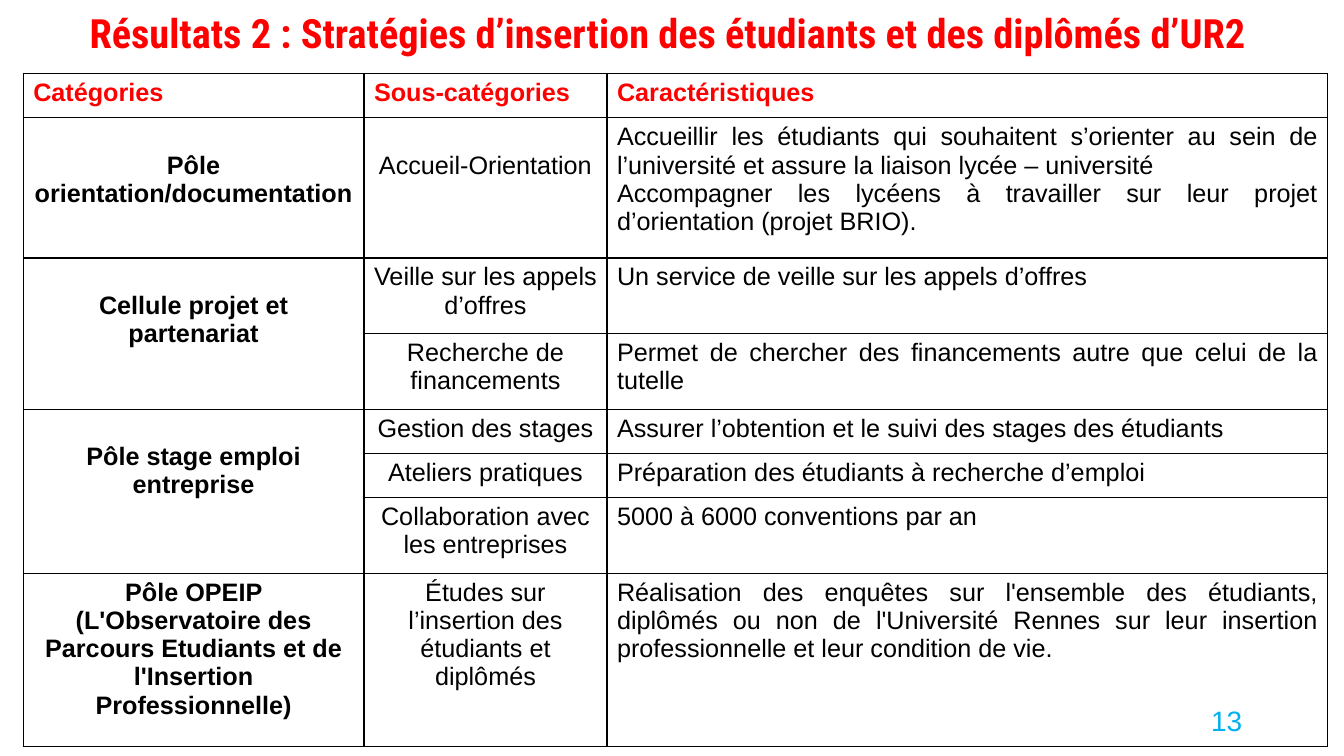
from lxml.etree import SubElement
from pptx import Presentation
from pptx.dml.color import RGBColor
from pptx.enum.text import MSO_ANCHOR, MSO_AUTO_SIZE, PP_ALIGN
from pptx.oxml.ns import qn
from pptx.util import Inches, Pt

RED = RGBColor(0xFF, 0x00, 0x00)
BLACK = RGBColor(0x00, 0x00, 0x00)
CYAN = RGBColor(0x00, 0xB0, 0xF0)

TITLE = "Résultats 2 : Stratégies d’insertion des étudiants et des diplômés d’UR2"
HEADERS = ["Catégories", "Sous-catégories", "Caractéristiques"]
GROUPS = [
    ("Pôle orientation/documentation", [
        ("Accueil-Orientation", [
            "Accueillir les étudiants qui souhaitent s’orienter au sein de "
            "l’université\u00a0et assure la liaison lycée – université",
            "Accompagner les lycéens à travailler sur leur projet "
            "d’orientation (projet BRIO)."]),
    ]),
    ("Cellule projet et partenariat", [
        ("Veille sur les appels d’offres",
         ["Un service de veille sur les appels d’offres"]),
        ("Recherche de financements",
         ["Permet de chercher des financements autre que celui de la tutelle"]),
    ]),
    ("Pôle stage emploi entreprise", [
        ("Gestion des stages",
         ["Assurer l’obtention et le suivi des stages des étudiants"]),
        ("Ateliers pratiques",
         ["Préparation des étudiants à recherche d’emploi"]),
        ("Collaboration avec les entreprises",
         ["5000 à 6000 conventions par an"]),
    ]),
    ("Pôle OPEIP (L'Observatoire des Parcours Etudiants et de l'Insertion "
     "Professionnelle)", [
        ("Études sur l’insertion des étudiants et diplômés", [
            "Réalisation des enquêtes sur l'ensemble des étudiants, diplômés "
            "ou non de l'Université Rennes sur leur insertion professionnelle "
            "et leur condition de vie."]),
    ]),
]
COL_WIDTHS = [3.38, 2.41, 7.15]
ROW_HEIGHTS = [0.44, 1.39, 0.75, 0.75, 0.44, 0.44, 0.75, 1.72]
LOWERED = {"Pôle orientation/documentation", "Accueil-Orientation",
           "Cellule projet et partenariat", "Pôle stage emploi entreprise"}
TOP_MARGIN, LOWERED_MARGIN = 0.05, 0.33


def write(tf, *lines, size=18, font="Arial", color=BLACK, bold=False,
          align=PP_ALIGN.CENTER, spacing=1.0):
    for i, line in enumerate(lines):
        p = tf.add_paragraph() if i else tf.paragraphs[0]
        p.alignment = align
        p.line_spacing = spacing
        r = p.add_run()
        r.text = line
        r.font.size = Pt(size)
        r.font.name = font
        r.font.bold = bold
        r.font.color.rgb = color


def add_borders(cell):
    tcPr = cell._tc.get_or_add_tcPr()
    for side in ("lnL", "lnR", "lnT", "lnB"):
        ln = SubElement(tcPr, qn(f"a:{side}"), w=str(Pt(1)))
        fill = SubElement(ln, qn("a:solidFill"))
        SubElement(fill, qn("a:srgbClr"), val=str(BLACK))


def fill_cell(cell, *lines, **fmt):
    cell.margin_top = Inches(LOWERED_MARGIN if lines[0] in LOWERED else TOP_MARGIN)
    write(cell.text_frame, *lines, **fmt)


def add_results_table(s):
    frame = s.shapes.add_table(len(ROW_HEIGHTS), len(COL_WIDTHS), Inches(0.23),
                               Inches(0.73), Inches(sum(COL_WIDTHS)),
                               Inches(sum(ROW_HEIGHTS)))
    table = frame.table
    table.first_row = table.horz_banding = False
    for col, width in zip(table.columns, COL_WIDTHS):
        col.width = Inches(width)
    for row, height in zip(table.rows, ROW_HEIGHTS):
        row.height = Inches(height)
    for cell in table.iter_cells():
        add_borders(cell)
        cell.fill.background()

    for c, header in enumerate(HEADERS):
        fill_cell(table.cell(0, c), header, color=RED, bold=True,
                  align=PP_ALIGN.JUSTIFY)
    row = 1
    for category, entries in GROUPS:
        first = table.cell(row, 0)
        if len(entries) > 1:
            first.merge(table.cell(row + len(entries) - 1, 0))
        fill_cell(first, category, bold=True)
        for subcategory, features in entries:
            fill_cell(table.cell(row, 1), subcategory)
            fill_cell(table.cell(row, 2), *features, align=PP_ALIGN.JUSTIFY)
            row += 1


def main():
    prs = Presentation()
    prs.slide_width, prs.slide_height = Inches(13.33), Inches(7.5)
    s = prs.slides.add_slide(prs.slide_layouts[5])

    title = s.shapes.title
    title.left, title.top = Inches(0.09), Inches(0.1)
    title.width, title.height = Inches(13.07), Inches(0.51)
    tf = title.text_frame
    tf.auto_size = MSO_AUTO_SIZE.NONE
    tf.vertical_anchor = MSO_ANCHOR.MIDDLE
    write(tf, TITLE, size=28.8, font="Roboto Condensed", color=RED, bold=True,
          spacing=0.9)

    add_results_table(s)

    number = s.shapes.add_textbox(Inches(9.42), Inches(6.95), Inches(3), Inches(0.4))
    tf = number.text_frame
    tf.word_wrap = True
    tf.vertical_anchor = MSO_ANCHOR.MIDDLE
    write(tf, "13", size=20, color=CYAN, align=PP_ALIGN.RIGHT)

    prs.save("out.pptx")


if __name__ == "__main__":
    main()
